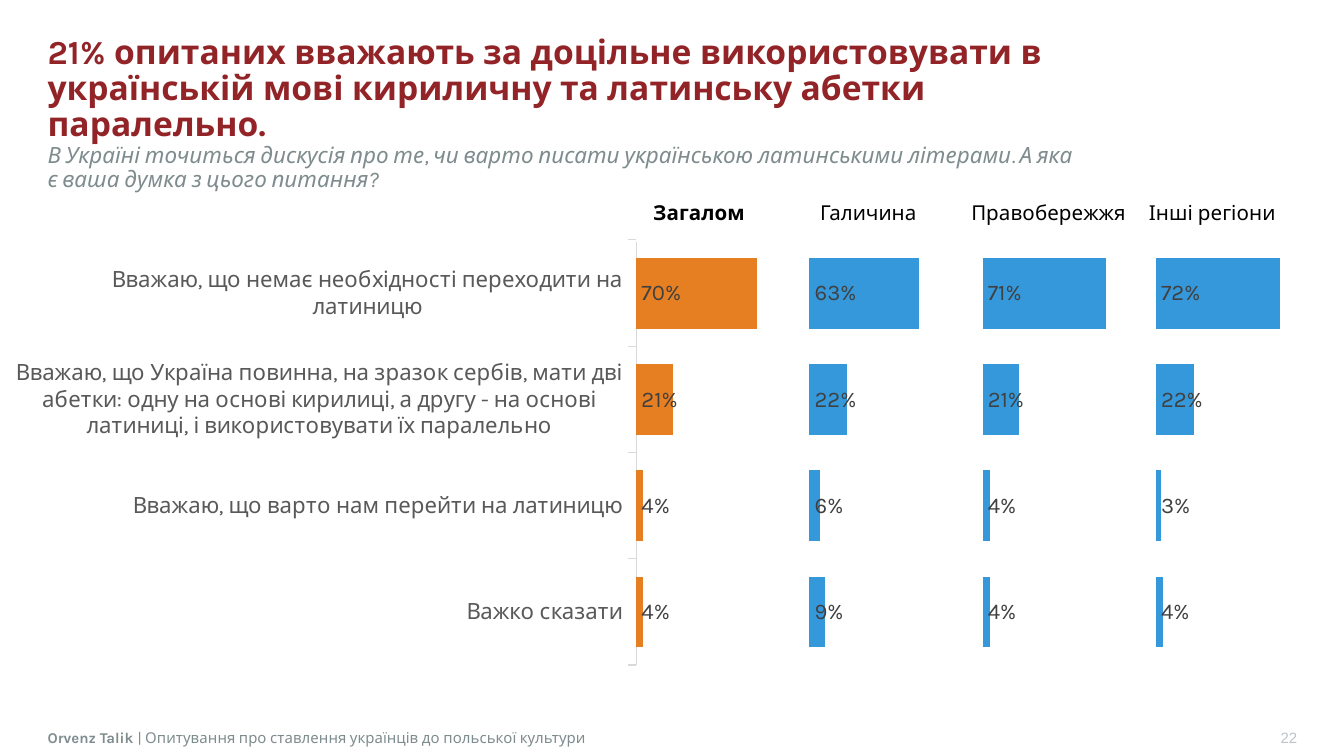
from pptx import Presentation
from pptx.chart.data import CategoryChartData
from pptx.dml.color import RGBColor
from pptx.enum.chart import XL_CHART_TYPE as ChartType, XL_LABEL_POSITION as LabelPosition
from pptx.enum.chart import XL_TICK_LABEL_POSITION as TickLabels, XL_TICK_MARK as TickMark
from pptx.enum.text import MSO_ANCHOR as Anchor, PP_ALIGN as Align
from pptx.oxml import parse_xml
from pptx.oxml.ns import nsdecls, qn
from pptx.util import Pt

COLORS = {
    "title": "922428", "muted": "7F8C8D", "page": "BDC3C7", "white": "FFFFFF",
    "black": "000000", "axis_text": "595959", "label": "404040", "axis": "D9D9D9",
    "total": "E67E22", "region": "3498DB",
}
FONT = "Karla"

TITLE = ("21% опитаних вважають за доцільне використовувати в українській мові "
         "кириличну та латинську абетки паралельно.")
QUESTION = ("В Україні точиться дискусія про те, чи варто писати українською "
            "латинськими літерами. А яка є ваша думка з цього питання?")
COMPANY = "Orvenz Talik "
SURVEY = "| Опитування про\u00a0ставлення українців до польської культури"
PAGE = "22"

ANSWERS = [
    "Вважаю, що немає необхідності переходити на латиницю",
    "Вважаю, що Україна повинна, на зразок сербів, мати дві абетки: одну на основі "
    "кирилиці, а другу - на основі латиниці, і використовувати їх паралельно",
    "Вважаю, що варто нам перейти на латиницю",
    "Важко сказати",
]
# group, header column width, color, share of each answer
GROUPS = [
    ("Загалом", 85, "total", [0.70, 0.21, 0.04, 0.04]),
    ("Галичина", 96.5, "region", [0.63, 0.22, 0.06, 0.09]),
    ("Правобережжя", 96.5, "region", [0.71, 0.21, 0.04, 0.04]),
    ("Інші регіони", 79, "region", [0.72, 0.22, 0.03, 0.04]),
]
PLOT = {"x": 0.468, "y": 0.116, "w": 0.532, "h": 0.787}


def style(font, size, color, bold=False, italic=False, name=FONT):
    font.name, font.size, font.bold, font.italic = name, Pt(size), bold, italic
    font.color.rgb = RGBColor.from_string(COLORS[color])


def add_text(slide, text, left, top, width, height, fill=None):
    """Add a middle-anchored box without insets and return its paragraph."""
    box = slide.shapes.add_textbox(Pt(left), Pt(top), Pt(width), Pt(height))
    if fill:
        box.fill.solid()
        box.fill.fore_color.rgb = RGBColor.from_string(COLORS[fill])
    frame = box.text_frame
    frame.word_wrap = True
    frame.vertical_anchor = Anchor.MIDDLE
    frame.margin_left = frame.margin_right = frame.margin_top = frame.margin_bottom = 0
    paragraph = frame.paragraphs[0]
    paragraph.text = text
    return paragraph


def add_footer(slide):
    page = add_text(slide, PAGE, 592.5, 389.5, 102.5, 11.5, "white")
    page.alignment = Align.RIGHT
    style(page.runs[0].font, 8, "page", name="Arial")
    footer = add_text(slide, COMPANY, 25.5, 389.5, 556, 11.5, "white")
    footer.add_run().text = SURVEY
    for run, bold in zip(footer.runs, (True, False)):
        style(run.font, 8, "muted", bold=bold)


def add_title(slide):
    title = add_text(slide, f"{TITLE}\v{QUESTION}", 25.5, 49.5, 556, 23)
    title.line_spacing = 0.9
    heading, question = title.runs
    style(heading.font, 18, "title", bold=True)
    style(question.font, 12, "muted", italic=True)


def add_bars(slide):
    """Add stacked bars in which an unfilled remainder completes each group to 100%."""
    data = CategoryChartData(number_format="0%")
    data.categories = ANSWERS
    for index, (_, _, _, shares) in enumerate(GROUPS):
        data.add_series(f"Series {2 * index + 1}", shares)
        data.add_series(f"Series {2 * index + 2}", [round(1 - share, 2) for share in shares])
    chart = slide.shapes.add_chart(ChartType.BAR_STACKED_100, Pt(8.5), Pt(95),
                                   Pt(703.5), Pt(289.5), data).chart
    chart.has_legend = chart.has_title = False
    style(chart.font, 12, "black")

    answers = chart.category_axis
    answers.reverse_order = True
    answers.has_major_gridlines = False
    answers.major_tick_mark = TickMark.OUTSIDE
    answers.tick_label_position = TickLabels.LOW
    answers.format.line.width = Pt(0.75)
    answers.format.line.color.rgb = RGBColor.from_string(COLORS["axis"])
    style(answers.tick_labels.font, 12, "axis_text")
    values = chart.value_axis
    values.minimum_scale, values.maximum_scale = 0, 1
    values.has_major_gridlines = False
    values.visible = False

    plot = chart.plots[0]
    plot.gap_width, plot.overlap = 50, 100
    plot.vary_by_categories = False
    series = list(plot.series)
    for (_, _, color, _), share, remainder in zip(GROUPS, series[::2], series[1::2]):
        share.format.fill.solid()
        share.format.fill.fore_color.rgb = RGBColor.from_string(COLORS[color])
        remainder.format.fill.background()
        labels = share.data_labels
        labels.show_value = True
        labels.position = LabelPosition.INSIDE_BASE
        labels.number_format, labels.number_format_is_linked = "0%", False
        style(labels.font, 12, "label")

    area = chart.element.find(".//" + qn("c:plotArea"))
    for layout in area.findall(qn("c:layout")):
        area.remove(layout)
    modes = '<c:xMode val="edge"/><c:yMode val="edge"/>'
    sizes = "".join(f'<c:{key} val="{value}"/>' for key, value in PLOT.items())
    area.insert(0, parse_xml(
        f'<c:layout {nsdecls("c")}><c:manualLayout><c:layoutTarget val="inner"/>'
        f"{modes}{sizes}</c:manualLayout></c:layout>"))


def add_headers(slide):
    total_width = sum(width for _, width, _, _ in GROUPS)
    table = slide.shapes.add_table(1, len(GROUPS), Pt(332), Pt(99.5),
                                   Pt(total_width), Pt(29.5)).table
    table.first_row = table.horz_banding = False
    for index, (name, width, color, _) in enumerate(GROUPS):
        table.columns[index].width = Pt(width)
        cell = table.cell(0, index)
        cell.fill.background()
        cell.vertical_anchor = Anchor.MIDDLE
        cell.margin_left = cell.margin_right = cell.margin_top = cell.margin_bottom = Pt(3.6)
        cell.text_frame.text = name
        paragraph = cell.text_frame.paragraphs[0]
        paragraph.alignment = Align.CENTER
        style(paragraph.runs[0].font, 11, "black", bold=color == "total")


def main():
    presentation = Presentation()
    presentation.slide_width, presentation.slide_height = Pt(720), Pt(405)
    slide = presentation.slides.add_slide(presentation.slide_layouts[6])
    add_footer(slide)
    add_title(slide)
    add_bars(slide)
    add_headers(slide)
    presentation.save("out.pptx")


if __name__ == "__main__":
    main()
